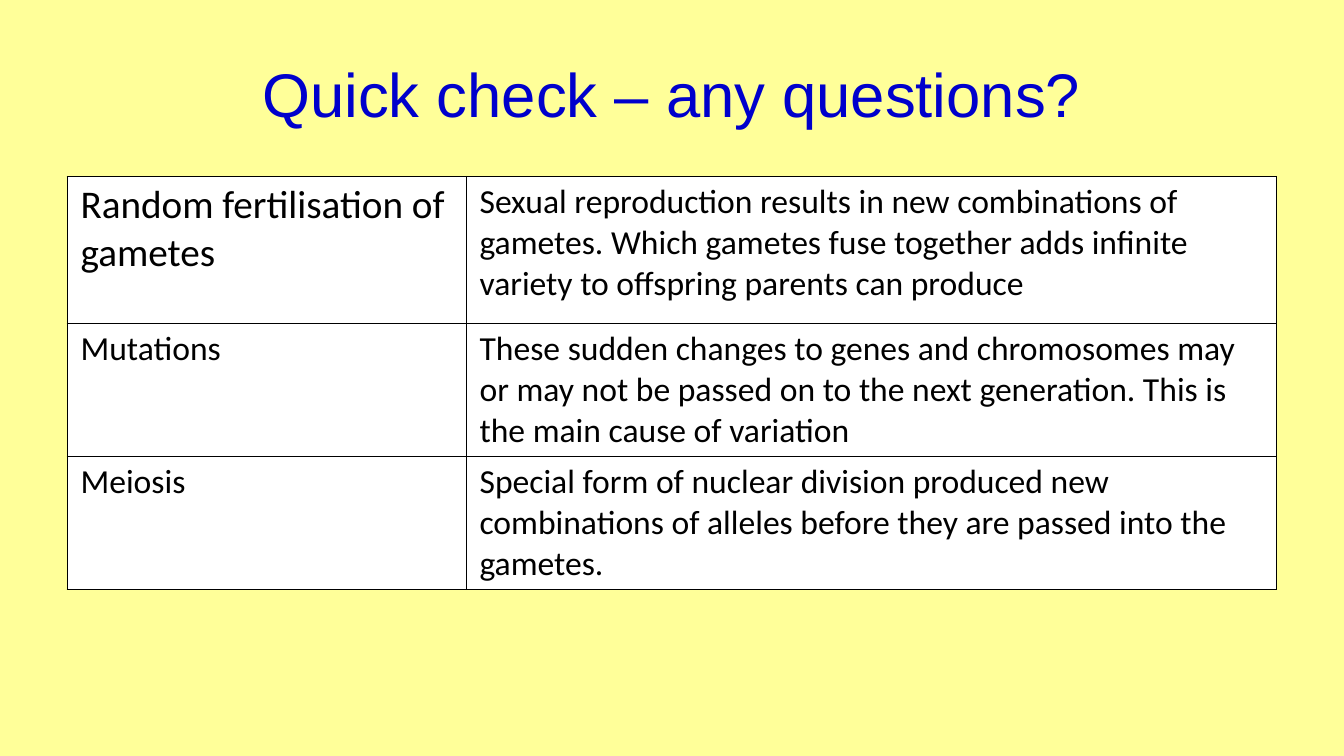
from lxml import etree
from pptx import Presentation
from pptx.dml.color import RGBColor
from pptx.enum.text import MSO_ANCHOR, PP_ALIGN
from pptx.oxml.ns import qn
from pptx.util import Pt

TITLE = "Quick check – any questions?"
# Each row: height, then (text, font size) for both columns
ROWS = [
    (105, [
        ("Random fertilisation of gametes", 28),
        ("Sexual reproduction results in new combinations of gametes. Which gametes "
         "fuse together adds infinite variety to offspring parents can produce", 24),
    ]),
    (95, [
        ("Mutations", 24),
        ("These sudden changes to genes and chromosomes may or may not be passed on "
         "to the next generation. This is the main cause of variation", 24),
    ]),
    (95, [
        ("Meiosis", 24),
        ("Special form of nuclear division produced new combinations of alleles "
         "before they are passed into the gametes.", 24),
    ]),
]

SLIDE_WIDTH, SLIDE_HEIGHT = 960, 540
MARGIN = 48
CONTENT_WIDTH = SLIDE_WIDTH - 2 * MARGIN
TITLE_TOP, TITLE_HEIGHT = 21.6, 90
TABLE_TOP = 126
COLUMN_WIDTHS = [285, CONTENT_WIDTH - 285]
CELL_MARGIN_X, CELL_MARGIN_Y = 9.6, 3.6
BORDER_WIDTH = 1

YELLOW = RGBColor(0xFF, 0xFF, 0x99)
BLUE = RGBColor(0x00, 0x00, 0xCC)
BLACK = RGBColor(0x00, 0x00, 0x00)
WHITE = RGBColor(0xFF, 0xFF, 0xFF)
CENTER = PP_ALIGN.CENTER
LEFT = PP_ALIGN.LEFT
MIDDLE = MSO_ANCHOR.MIDDLE
TOP = MSO_ANCHOR.TOP


def write(text_frame, text, font_name, size, color, alignment):
    text_frame.text = text
    text_frame.word_wrap = True
    paragraph = text_frame.paragraphs[0]
    paragraph.alignment = alignment
    font = paragraph.runs[0].font
    font.name = font_name
    font.size = Pt(size)
    font.bold = False
    font.color.rgb = color


def add_borders(cell):
    """Draw all four edges; the schema wants them ahead of the cell fill."""
    properties = cell._tc.get_or_add_tcPr()
    for index, edge in enumerate(("a:lnL", "a:lnR", "a:lnT", "a:lnB")):
        line = etree.Element(qn(edge), w=str(Pt(BORDER_WIDTH)))
        fill = etree.SubElement(line, qn("a:solidFill"))
        etree.SubElement(fill, qn("a:srgbClr"), val=str(BLACK))
        properties.insert(index, line)


def add_title(slide):
    title = slide.shapes.add_textbox(
        Pt(MARGIN), Pt(TITLE_TOP), Pt(CONTENT_WIDTH), Pt(TITLE_HEIGHT))
    title.text_frame.vertical_anchor = MIDDLE
    write(title.text_frame, TITLE, "Arial", 44, BLUE, CENTER)


def add_variation_table(slide):
    table_height = sum(height for height, _ in ROWS)
    table = slide.shapes.add_table(
        len(ROWS), len(COLUMN_WIDTHS), Pt(MARGIN), Pt(TABLE_TOP),
        Pt(CONTENT_WIDTH), Pt(table_height)).table
    table.first_row = False
    table.horz_banding = False
    for column, width in zip(table.columns, COLUMN_WIDTHS):
        column.width = Pt(width)
    for row, (height, entries) in zip(table.rows, ROWS):
        row.height = Pt(height)
        for cell, (text, size) in zip(row.cells, entries):
            cell.margin_left = cell.margin_right = Pt(CELL_MARGIN_X)
            cell.margin_top = cell.margin_bottom = Pt(CELL_MARGIN_Y)
            cell.vertical_anchor = TOP
            cell.fill.solid()
            cell.fill.fore_color.rgb = WHITE
            write(cell.text_frame, text, "Calibri", size, BLACK, LEFT)
            add_borders(cell)


def main():
    presentation = Presentation()
    presentation.slide_width = Pt(SLIDE_WIDTH)
    presentation.slide_height = Pt(SLIDE_HEIGHT)
    slide = presentation.slides.add_slide(presentation.slide_layouts[6])
    slide.background.fill.solid()
    slide.background.fill.fore_color.rgb = YELLOW
    add_title(slide)
    add_variation_table(slide)
    presentation.save("out.pptx")


if __name__ == "__main__":
    main()
